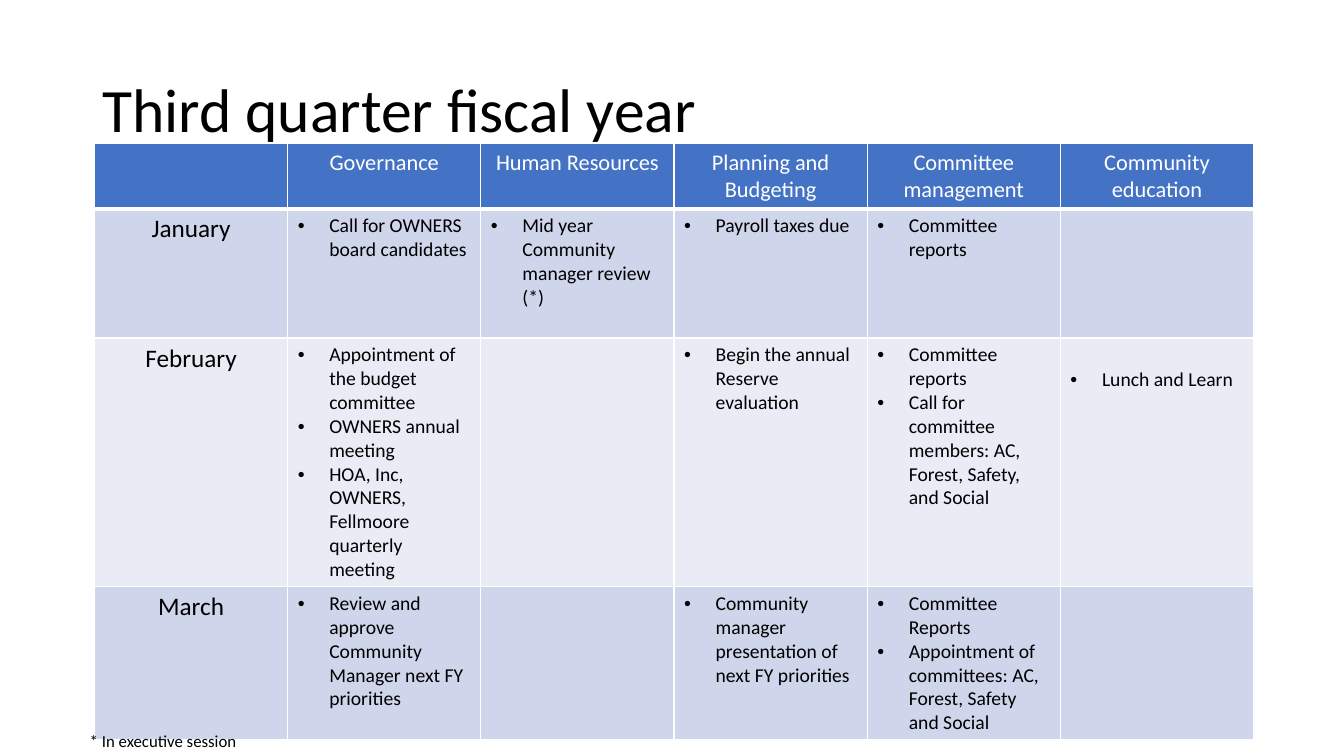
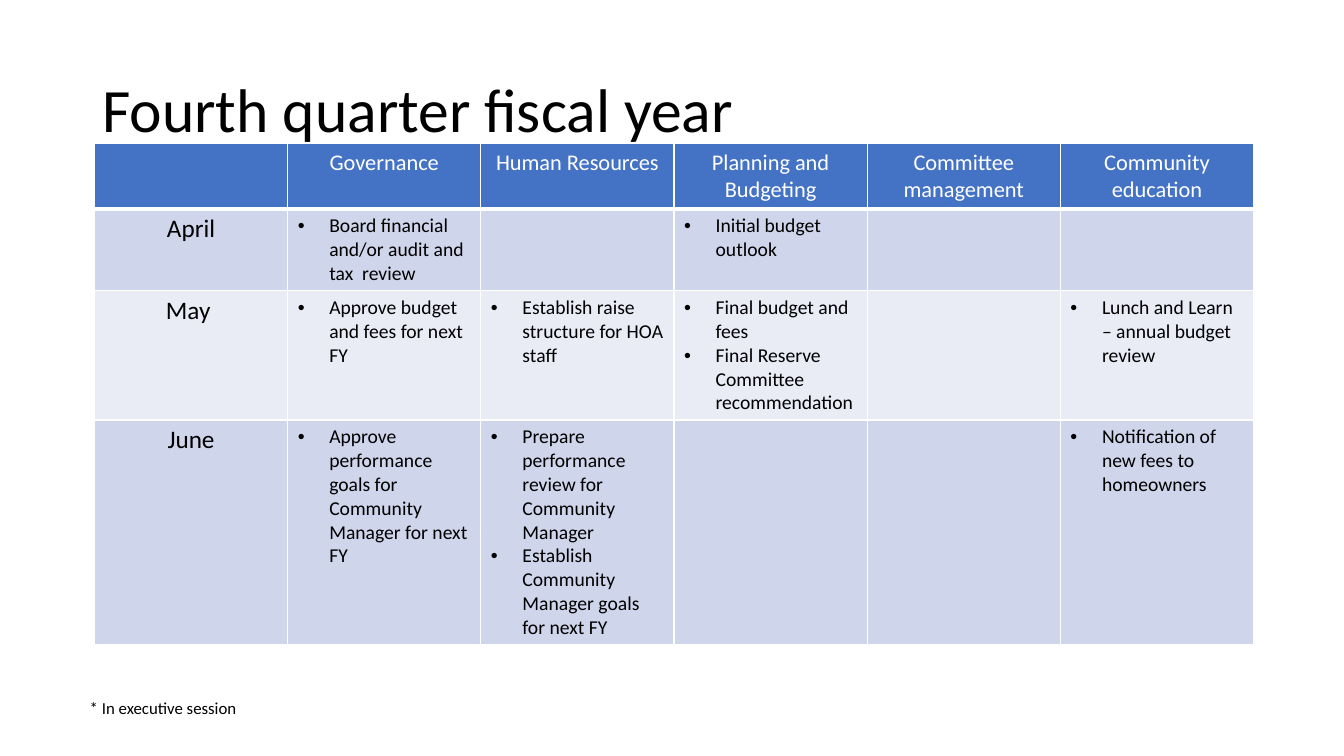
"""Build the quarterly fiscal year planning slides."""
from pptx import Presentation
from pptx.dml.color import RGBColor
from pptx.enum.text import MSO_ANCHOR as ANCHOR, PP_ALIGN as ALIGN
from pptx.oxml.xmlchemy import OxmlElement as Element
from pptx.util import Emu, Pt

FONT = "Calibri"
BLACK, WHITE = "000000", "FFFFFF"
HEADER_FILL = "4472C4"
BAND_FILLS = ("CFD5EA", "E9EBF5")
HEADERS = ("", "Governance", "Human Resources", "Planning and Budgeting",
           "Committee management", "Community education")
TABLE_LEFT, TABLE_TOP, COLUMN_WIDTH, HEADER_HEIGHT = 90, 137, 184, 62
BULLET_INDENT = 30
LOWERED_TOP = 28

THIRD_QUARTER = (
    ("January", 123, (
        ["Call for OWNERS board candidates"],
        ["Mid year Community manager review (*)"],
        ["Payroll taxes due"],
        ["Committee reports"],
        [])),
    ("February", 237, (
        ["Appointment of the budget committee", "OWNERS annual meeting",
         "HOA, Inc, OWNERS, Fellmoore quarterly meeting"],
        [],
        ["Begin the annual Reserve evaluation"],
        ["Committee reports",
         "Call for committee members: AC, Forest, Safety, and Social"],
        ["Lunch and Learn"])),
    ("March", 145, (
        ["Review and approve Community Manager next FY priorities"],
        [],
        ["Community manager presentation of next FY priorities"],
        ["Committee Reports",
         "Appointment of committees: AC, Forest, Safety and Social"],
        [])),
)
FOURTH_QUARTER = (
    ("April", 78, (
        ["Board financial and/or audit and tax  review"],
        [],
        ["Initial budget outlook"],
        [],
        [])),
    ("May ", 123, (
        ["Approve budget and fees for next FY"],
        ["Establish raise structure for HOA staff"],
        ["Final budget and fees", "Final Reserve Committee recommendation"],
        [],
        ["Lunch and Learn – annual budget review"])),
    ("June", 214, (
        ["Approve performance goals for Community Manager for next FY"],
        ["Prepare performance review for Community Manager",
         "Establish Community Manager goals for next FY"],
        [],
        [],
        ["Notification of new fees to homeowners"])),
)


def px(n):
    """Turn pixels into EMU."""
    return Emu(n * 9525)


def color(value):
    """Turn a hex string into a colour."""
    return RGBColor.from_string(value)


def format_runs(p, size, hex_color=BLACK):
    """Set the font of every run in a paragraph."""
    for r in p.runs:
        r.font.name, r.font.size, r.font.bold = FONT, Pt(size), False
        r.font.color.rgb = color(hex_color)


def add_text(s, text, left, top, width, height, size, anchor=ANCHOR.TOP, spacing=1.0):
    """Add one line of text in a wrapping box."""
    tf = s.shapes.add_textbox(px(left), px(top), px(width), px(height)).text_frame
    tf.word_wrap, tf.vertical_anchor = True, anchor
    tf.text = text
    p = tf.paragraphs[0]
    p.line_spacing = spacing
    format_runs(p, size)


def style_cell(cell, fill, bottom=1):
    """Give a cell white borders and a solid fill."""
    tc_pr = cell._tc.get_or_add_tcPr()
    for side, width in (("L", 1), ("R", 1), ("T", 1), ("B", bottom)):
        line = Element(f"a:ln{side}")
        line.set("w", str(Pt(width)))
        line_fill, rgb = Element("a:solidFill"), Element("a:srgbClr")
        rgb.set("val", WHITE)
        line_fill.append(rgb)
        line.append(line_fill)
        tc_pr.append(line)
    cell.fill.solid()
    cell.fill.fore_color.rgb = color(fill)


def set_label(cell, text, size, hex_color=BLACK):
    """Write a centred label in a cell."""
    cell.text_frame.text = text
    p = cell.text_frame.paragraphs[0]
    p.alignment = ALIGN.CENTER
    format_runs(p, size, hex_color)


def set_bullets(cell, items):
    """Write a bulleted list in a cell."""
    cell.text_frame.text = "\n".join(items)
    for p in cell.text_frame.paragraphs if items else ():
        p_pr = p._p.get_or_add_pPr()
        p_pr.set("marL", str(px(BULLET_INDENT)))
        p_pr.set("indent", str(-px(BULLET_INDENT)))
        font, bullet = Element("a:buFont"), Element("a:buChar")
        font.set("typeface", "Arial")
        bullet.set("char", "•")
        p_pr.append(font)
        p_pr.append(bullet)
        format_runs(p, 14)


def add_plan(s, months):
    """Add the table of months against areas of work."""
    height = HEADER_HEIGHT + sum(month[1] for month in months)
    table = s.shapes.add_table(
        len(months) + 1, len(HEADERS), px(TABLE_LEFT), px(TABLE_TOP),
        px(COLUMN_WIDTH * len(HEADERS)), px(height)).table
    table.first_row = table.horz_banding = False
    table.rows[0].height = px(HEADER_HEIGHT)
    for col, header in enumerate(HEADERS):
        table.columns[col].width = px(COLUMN_WIDTH)
        style_cell(table.cell(0, col), HEADER_FILL, bottom=3)
        set_label(table.cell(0, col), header, 16, WHITE)
    for row, (month, row_height, areas) in enumerate(months, 1):
        table.rows[row].height = px(row_height)
        for cell in table.rows[row].cells:
            style_cell(cell, BAND_FILLS[(row - 1) % 2])
        set_label(table.cell(row, 0), month, 18)
        for col, items in enumerate(areas, 1):
            set_bullets(table.cell(row, col), items)
    return table


def add_quarter(prs, title, months, note_top):
    """Add a slide for one quarter and return its table."""
    s = prs.slides.add_slide(prs.slide_layouts[6])
    add_text(s, title, 88, 38, 1104, 139, 44, ANCHOR.MIDDLE, 0.9)
    table = add_plan(s, months)
    add_text(s, "* In executive session", 76, note_top, 569, 29, 12)
    return table


def main():
    """Build and save the presentation."""
    prs = Presentation()
    prs.slide_width, prs.slide_height = px(1280), px(720)
    table = add_quarter(prs, "Third quarter fiscal year", THIRD_QUARTER, 691)
    table.cell(2, 5).margin_top = px(LOWERED_TOP)
    add_quarter(prs, "Fourth quarter fiscal year", FOURTH_QUARTER, 660)
    prs.save("out.pptx")


if __name__ == "__main__":
    main()
